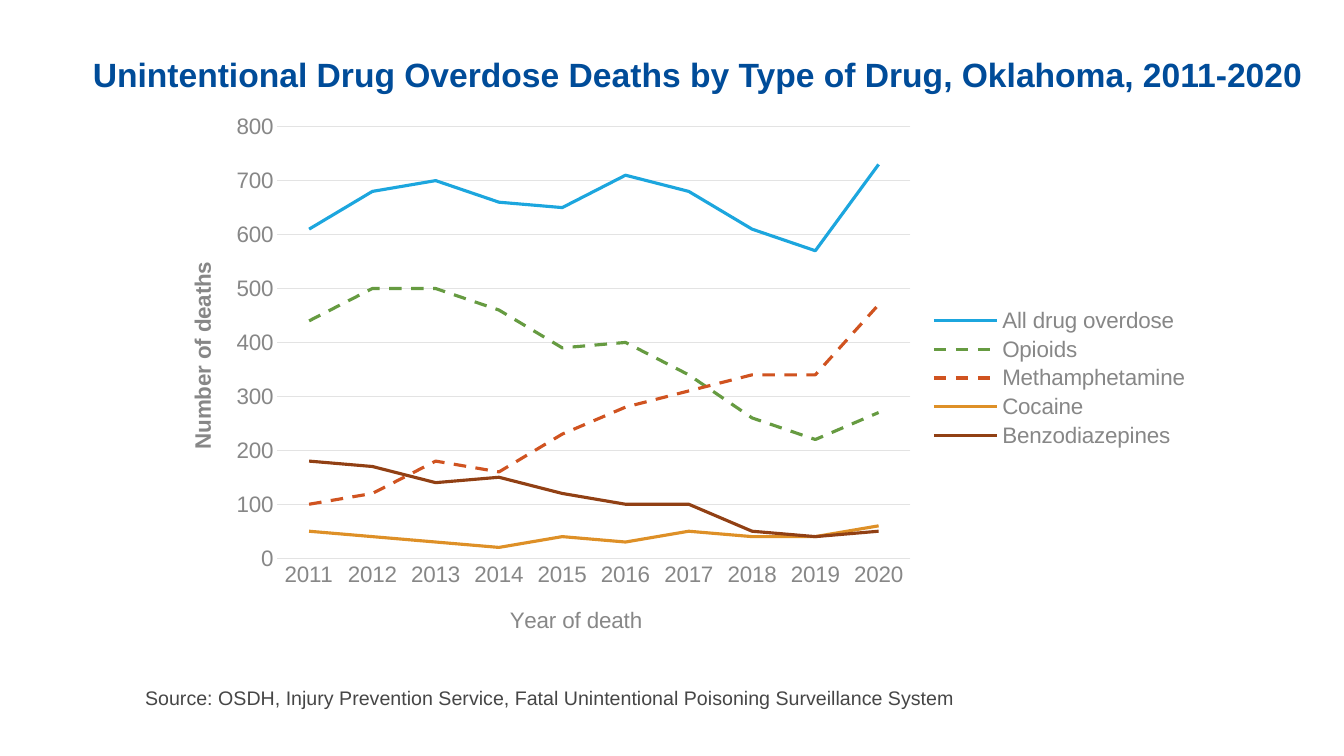
from dataclasses import dataclass

from lxml import etree
from pptx import Presentation
from pptx.chart.data import CategoryChartData
from pptx.dml.color import RGBColor
from pptx.enum.chart import XL_CHART_TYPE, XL_LEGEND_POSITION, XL_TICK_MARK
from pptx.enum.dml import MSO_LINE
from pptx.enum.text import MSO_ANCHOR, MSO_AUTO_SIZE, PP_ALIGN
from pptx.oxml.ns import qn
from pptx.util import Inches, Pt

LINE_CHART = XL_CHART_TYPE.LINE
LEGEND_RIGHT = XL_LEGEND_POSITION.RIGHT
NO_TICK = XL_TICK_MARK.NONE
SOLID, DASH = MSO_LINE.SOLID, MSO_LINE.DASH
TOP, LEFT = MSO_ANCHOR.TOP, PP_ALIGN.LEFT
NO_AUTOFIT = MSO_AUTO_SIZE.NONE
TITLE_ONLY = 5


@dataclass(frozen=True)
class Theme:
    font: str = "Arial"
    heading: str = "004C99"
    body: str = "464646"
    muted: str = "878787"
    grid: str = "E3E3E3"
    heading_size: float = 24
    chart_size: float = 16
    source_size: float = 14
    grid_width: float = 0.75
    series_width: float = 2.25


YEARS = [str(year) for year in range(2011, 2021)]
DRUGS = [
    ("All drug overdose", "1CA6DE", SOLID,
     (610, 680, 700, 660, 650, 710, 680, 610, 570, 730)),
    ("Opioids", "669B41", DASH,
     (440, 500, 500, 460, 390, 400, 340, 260, 220, 270)),
    ("Methamphetamine", "D05320", DASH,
     (100, 120, 180, 160, 230, 280, 310, 340, 340, 470)),
    ("Cocaine", "DE9027", SOLID,
     (50, 40, 30, 20, 40, 30, 50, 40, 40, 60)),
    ("Benzodiazepines", "914014", SOLID,
     (180, 170, 140, 150, 120, 100, 100, 50, 40, 50)),
]


def set_layout(parent, position, **settings):
    """Give a chart part a manual layout, in fractions of the chart."""
    layout = parent.find(qn("c:layout"))
    if layout is None:
        layout = etree.Element(qn("c:layout"))
        parent.insert(position, layout)
    manual = etree.SubElement(layout, qn("c:manualLayout"))
    for name, value in settings.items():
        etree.SubElement(manual, qn(f"c:{name}")).set("val", str(value))


class SlideBuilder:
    def __init__(self, slide, theme):
        self.slide = slide
        self.theme = theme

    def style_font(self, font, size, color, bold=False):
        font.name = self.theme.font
        font.size = Pt(size)
        font.bold = bold
        font.color.rgb = RGBColor.from_string(color)

    def style_line(self, line, color, width):
        line.color.rgb = RGBColor.from_string(color)
        line.width = Pt(width)

    def fill_text(self, box, text, size, color, bold=False):
        frame = box.text_frame
        frame.word_wrap = True
        frame.auto_size = NO_AUTOFIT
        frame.vertical_anchor = TOP
        para = frame.paragraphs[0]
        para.alignment = LEFT
        span = para.add_run()
        span.text = text
        self.style_font(span.font, size, color, bold)

    def title(self, text, left, top, width, height):
        box = self.slide.shapes.title
        box.left, box.top = Inches(left), Inches(top)
        box.width, box.height = Inches(width), Inches(height)
        self.fill_text(box, text, self.theme.heading_size,
                       self.theme.heading, True)

    def source_note(self, text, left, top, width, height):
        box = self.slide.shapes.add_textbox(
            Inches(left), Inches(top), Inches(width), Inches(height))
        self.fill_text(box, text, self.theme.source_size, self.theme.body)

    def axis(self, axis, text, x, y, bold=False, rotation=0):
        theme = self.theme
        axis.major_tick_mark = axis.minor_tick_mark = NO_TICK
        self.style_font(axis.tick_labels.font, theme.chart_size, theme.muted)
        frame = axis.axis_title.text_frame
        frame._txBody.bodyPr.set("rot", str(rotation * 60000))
        frame._txBody.bodyPr.set("vert", "horz")
        span = frame.paragraphs[0].add_run()
        span.text = text
        self.style_font(span.font, theme.chart_size, theme.muted, bold)
        set_layout(axis.axis_title._element, 1,
                   xMode="edge", yMode="edge", x=x, y=y)

    def line_chart(self, categories, drugs, left, top, width, height):
        theme = self.theme
        data = CategoryChartData()
        data.categories = categories
        for name, _, _, deaths in drugs:
            data.add_series(name, deaths)
        chart = self.slide.shapes.add_chart(
            LINE_CHART, Inches(left), Inches(top), Inches(width),
            Inches(height), data).chart
        chart.has_title = False
        self.style_font(chart.font, theme.chart_size, theme.muted)

        plot = chart.plots[0]
        plot.vary_by_categories = False
        for series, (_, color, dash, _) in zip(plot.series, drugs):
            series.smooth = False
            self.style_line(series.format.line, color, theme.series_width)
            series.format.line.dash_style = dash

        years, deaths = chart.category_axis, chart.value_axis
        self.axis(years, "Year of death", 0.33, 0.91)
        self.style_line(years.format.line, theme.grid, theme.grid_width)
        self.axis(deaths, "Number of deaths", 0.02, 0.28, True, -90)
        deaths.minimum_scale, deaths.maximum_scale = 0, 800
        deaths.major_unit = 100
        deaths.format.line.fill.background()
        self.style_line(deaths.major_gridlines.format.line,
                        theme.grid, theme.grid_width)

        chart.has_legend = True
        chart.legend.position = LEGEND_RIGHT
        chart.legend.include_in_layout = False
        self.style_font(chart.legend.font, theme.chart_size, theme.muted)
        set_layout(chart._chartSpace.chart.plotArea, 0, layoutTarget="inner",
                   xMode="edge", yMode="edge", x=0.11, y=0.04, w=0.61, h=0.79)


def main():
    deck = Presentation()
    deck.slide_width, deck.slide_height = Inches(13.33), Inches(7.5)
    page = deck.slides.add_slide(deck.slide_layouts[TITLE_ONLY])
    builder = SlideBuilder(page, Theme())
    builder.title("Unintentional Drug Overdose Deaths by Type of Drug, "
                  "Oklahoma, 2011-2020", 0.82, 0.48, 12.51, 0.71)
    builder.source_note("Source: OSDH, Injury Prevention Service, Fatal "
                        "Unintentional Poisoning Surveillance System",
                        1.34, 6.76, 9.88, 0.22)
    builder.line_chart(YEARS, DRUGS, 1.62, 1.04, 10.29, 5.42)
    deck.save("out.pptx")


if __name__ == "__main__":
    main()
